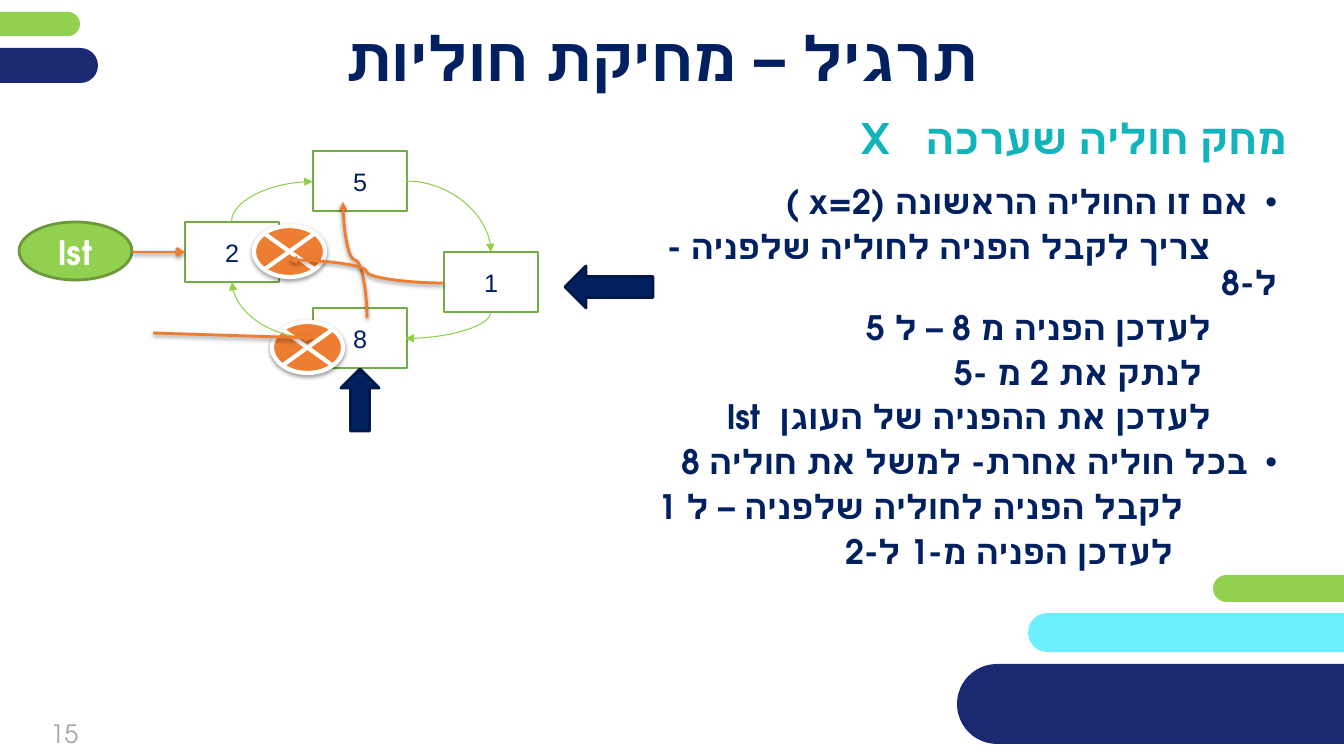
from lxml import etree
from pptx import Presentation
from pptx import util as u
from pptx.dml.color import RGBColor
from pptx.enum import shapes, text
from pptx.oxml import parse_xml
from pptx.oxml.ns import qn

SCALE = 914400 / 100.8
FONT = "TeX Gyre Adventor"
NAVY, LIME, DEEP, ORANGE, WHITE = "002060", "92D050", "192A72", "ED7D31", "FFFFFF"
KIND = shapes.MSO_SHAPE
MID, TOP = text.MSO_ANCHOR.MIDDLE, text.MSO_ANCHOR.TOP
RIGHT, CENTER = text.PP_ALIGN.RIGHT, text.PP_ALIGN.CENTER
SHADOW = (
    '<a:effectLst xmlns:a="http://schemas.openxmlformats.org/drawingml/2006/main">'
    '<a:outerShdw blurRad="39370" dist="20320" dir="5400000" rotWithShape="0">'
    '<a:srgbClr val="000000"><a:alpha val="38000"/></a:srgbClr>'
    '</a:outerShdw></a:effectLst>'
)
BARS = [
    (-152, 12, 232, 24, LIME),
    (-191, 48, 289, 35, DEEP),
    (1028, 613, 525, 39, "6CF0FF"),
    (957, 664, 455, 80, DEEP),
    (1213, 575, 261, 27, LIME),
]
STEPS = [
    (["אם זו החוליה הראשונה (x=2 )"], None),
    (["צריך לקבל הפניה לחוליה שלפניה - ל-8"], 66),
    (["לעדכן הפניה מ 8 – ל 5"], 66),
    (["לנתק את 2 מ -5"], 75),
    (["לעדכן את ההפניה של העוגן", "lst"], 66),
    (["בכל חוליה אחרת- למשל את חוליה 8"], None),
    (["לקבל הפניה לחוליה שלפניה – ל 1"], 94),
    (["לעדכן הפניה מ-1 ל-2"], 104),
]
NODES = {"5": (313, 151), "1": (444, 252), "8": (313, 308), "2": (185, 222)}
LINKS = [
    (406, 181, 85, 71, 0, ""),
    (435, 283, 26, 85, 90, ""),
    (232, 282, 81, 56, 180, ""),
    (252, 161, 40, 81, 90, "HV"),
]
DETOURS = [(297, 248, 116, 24, 270, "V"), (289, 260, 155, 23, 180, "")]


def px(*vals):
    """Turn pixel lengths into EMU."""
    return [u.Emu(round(v * SCALE)) for v in vals]


def tint(code):
    """Turn a hex string into a colour."""
    return RGBColor.from_string(code)


def shade(item):
    """Give an element a soft drop shadow."""
    props = item.element.spPr
    for old in props.findall(qn("a:effectLst")):
        props.remove(old)
    props.append(parse_xml(SHADOW))


def shape(slide, kind, box, fill, line=None, width=2):
    """Add a filled preset shape."""
    item = slide.shapes.add_shape(kind, *px(*box))
    item.shadow.inherit = False
    item.fill.solid()
    item.fill.fore_color.rgb = tint(fill)
    if line:
        item.line.color.rgb = tint(line)
        item.line.width = u.Pt(width)
    else:
        item.line.fill.background()
    return item


def label(slide, box):
    """Add an empty text box."""
    return slide.shapes.add_textbox(*px(*box))


def spread(parts, track):
    """Join parts into runs with a widened space between them."""
    runs = [(parts[0], 0)]
    for part in parts[1:]:
        runs += [(" ", track), (part, 0)]
    return runs


def write(item, paras, size=18, color=NAVY, bold=False, align=CENTER,
          anchor=MID, inset=True, rtl=True, lead=None, after=None, script=FONT):
    """Fill an element with paragraphs, each a list of (words, tracking) runs."""
    frame = item.text_frame
    frame.word_wrap = True
    frame.vertical_anchor = anchor
    if not inset:
        frame.margin_left = frame.margin_right = 0
        frame.margin_top = frame.margin_bottom = 0
    for i, runs in enumerate(paras):
        para = frame.add_paragraph() if i else frame.paragraphs[0]
        para.alignment = align
        para.line_spacing = lead
        para.space_after = None if after is None else u.Pt(after)
        para._p.get_or_add_pPr().set("rtl", str(int(rtl)))
        for words, track in runs:
            run = para.add_run()
            run.text = words
            font = run.font
            font.name, font.size, font.bold = FONT, u.Pt(size), bold
            font.color.rgb = tint(color)
            props = run._r.get_or_add_rPr()
            etree.SubElement(props, qn("a:cs")).set("typeface", script)
            if track:
                props.set("spc", str(track))
    return frame.paragraphs


def indent(para, first):
    """Indent the first line, or hang it after a bullet when first is None."""
    props = para._p.get_or_add_pPr()
    hang = px(29)[0]
    props.set("marL", str(hang if first is None else 0))
    props.set("indent", str(-hang if first is None else px(first)[0]))
    if first is None:
        etree.SubElement(props, qn("a:buFont")).set("typeface", "Arial")
        etree.SubElement(props, qn("a:buChar")).set("char", "•")
    else:
        etree.SubElement(props, qn("a:buNone"))


def wire(slide, kind, ends, color, width, head="triangle"):
    """Add a connector with an arrowhead."""
    item = slide.shapes.add_connector(kind, *px(*ends))
    item.line.color.rgb = tint(color)
    item.line.width = u.Pt(width)
    etree.SubElement(item.line._get_or_add_ln(), qn("a:tailEnd")).set("type", head)
    etree.SubElement(item.element.spPr, qn("a:effectLst"))
    return item


def curve(slide, place, color, width, preset):
    """Add a curved connector, turned and flipped within its frame."""
    x, y, w, h, turn, flips = place
    kind = shapes.MSO_CONNECTOR.CURVE
    item = wire(slide, kind, (x, y, x + w, y + h), color, width)
    props = item.element.spPr
    frame = props.find(qn("a:xfrm"))
    frame.set("rot", str(turn * 60000))
    for axis in flips:
        frame.set("flip" + axis, "1")
    props.find(qn("a:prstGeom")).set("prst", preset)
    return item


def words(slide):
    """Add the title, the subtitle, the steps and the page number."""
    write(label(slide, (-18, 705, 165, 57)), [[("15", 0)]],
          color="A6A6A6", rtl=False)
    write(label(slide, (113, 17, 1081, 80)), [[("תרגיל – מחיקת חוליות ", 0)]],
          size=44, bold=True, inset=False)
    write(label(slide, (56, 113, 1231, 50)),
          [spread(["מחק חוליה שערכה", "X"], 1660)],
          size=30, color="12B4BC", bold=True, align=RIGHT, inset=False)
    paras = write(label(slide, (613, 181, 674, 379)),
                  [spread(parts, 670) for parts, _ in STEPS], size=24, bold=True,
                  align=RIGHT, anchor=TOP, lead=0.9, after=6)
    for para, (_, first) in zip(paras, STEPS):
        indent(para, first)


def ring(slide):
    """Draw the circular list with its links and removals."""
    boxes = {}
    for name, spot in NODES.items():
        boxes[name] = shape(slide, KIND.RECTANGLE, (*spot, 94, 60), WHITE, "70AD47")
        write(boxes[name], [[(name, 0)]], script="Arial")
    anchor = shape(slide, KIND.OVAL, (19, 222, 113, 58), LIME, "6C9A3B")
    write(anchor, [[("lst", 0)]], size=24, color=WHITE, bold=True,
          inset=False, lead=1.07, after=8)
    line = shapes.MSO_CONNECTOR.STRAIGHT
    start = wire(slide, line, (132, 252, 185, 252), ORANGE, 2, "arrow")
    start.end_connect(boxes["2"], 1)
    shade(start)
    for spot in ((254, 226), (272, 322)):
        shade(shape(slide, KIND.FLOWCHART_SUMMING_JUNCTION, (*spot, 71, 51),
                    ORANGE, WHITE, 3))
    shape(slide, KIND.UP_ARROW, (341, 369, 38, 62), NAVY, "001847")
    shape(slide, KIND.LEFT_ARROW, (565, 266, 88, 42), NAVY, "001847")
    for place in LINKS:
        curve(slide, place, "8FCF4B", 0.75, "curvedConnector2")
    for place in DETOURS:
        shade(curve(slide, place, ORANGE, 2, "curvedConnector3"))
    entry = wire(slide, line, (153, 333, 313, 338), ORANGE, 2)
    entry.end_connect(boxes["8"], 1)
    shade(entry)


def main():
    """Build the slide and save it."""
    deck = Presentation()
    deck.slide_width, deck.slide_height = px(1344, 756)
    slide = deck.slides.add_slide(deck.slide_layouts[6])
    for *box, fill in BARS:
        shape(slide, KIND.ROUNDED_RECTANGLE, box, fill).adjustments[0] = 0.5
    words(slide)
    ring(slide)
    deck.save("out.pptx")


if __name__ == "__main__":
    main()
